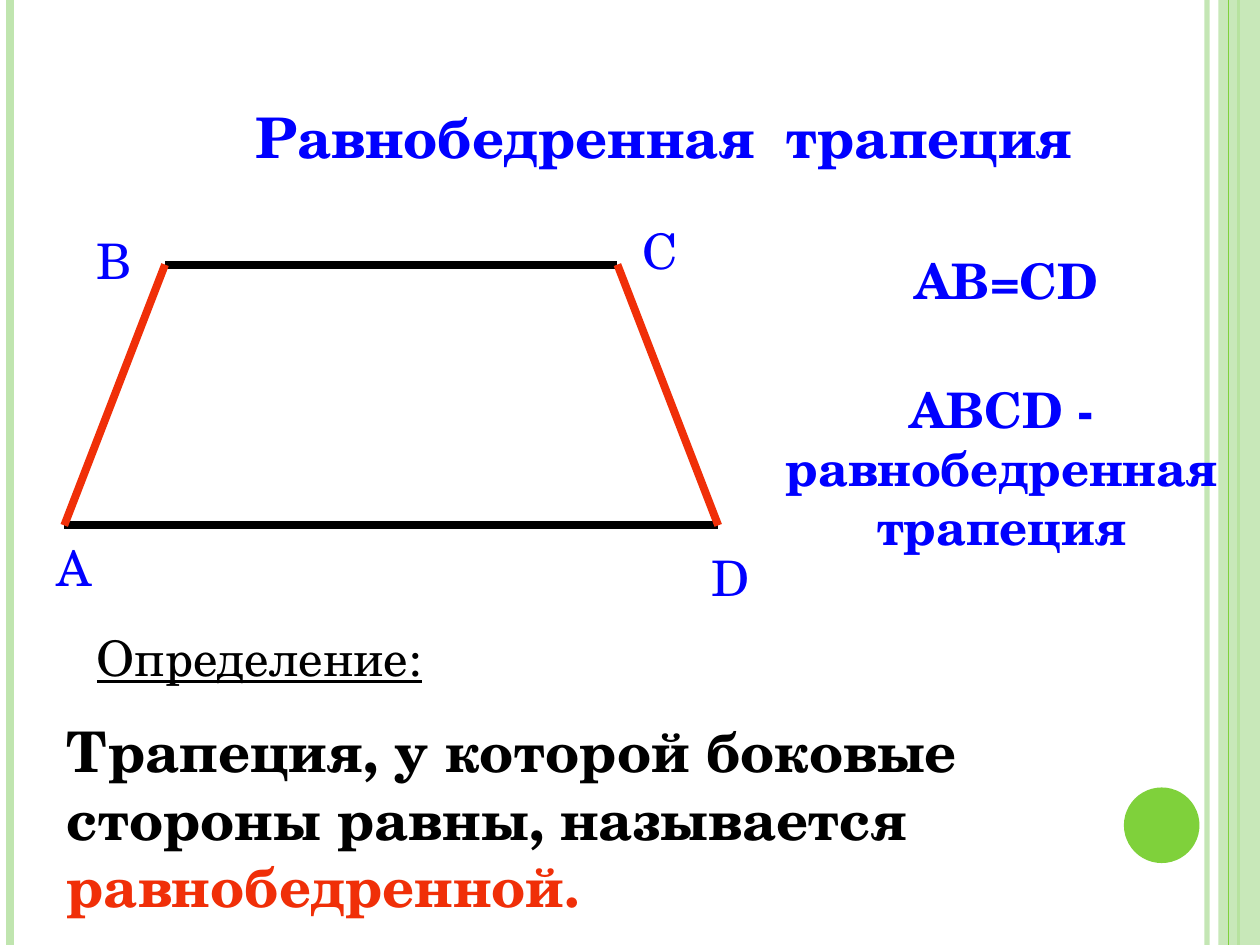
from dataclasses import dataclass

from lxml import etree
from pptx import Presentation
from pptx.dml.color import RGBColor
from pptx.enum.shapes import MSO_CONNECTOR, MSO_SHAPE
from pptx.enum.text import MSO_ANCHOR, MSO_AUTO_SIZE, PP_ALIGN
from pptx.oxml.ns import qn
from pptx.util import Inches, Pt

STRAIGHT = MSO_CONNECTOR.STRAIGHT
RECTANGLE, OVAL = MSO_SHAPE.RECTANGLE, MSO_SHAPE.OVAL
TOP = MSO_ANCHOR.TOP
NO_FIT = MSO_AUTO_SIZE.NONE
LEFT, CENTER = PP_ALIGN.LEFT, PP_ALIGN.CENTER

FONT = "TeX Gyre Schola"
BLUE, RED, BLACK = "0000FF", "F02F08", "000000"
GREEN, PALE_GREEN = "7FD13B", "C0E5AF"

# The slide is a grid of 100 columns by 75 rows
WIDTH, HEIGHT = Inches(10), Inches(7.5)
COLUMNS, ROWS = 100, 75


@dataclass
class Area:
    column: float
    row: float
    columns: float
    rows: float


@dataclass
class Line:
    start: tuple[float, float]
    end: tuple[float, float]
    color: str
    weight: float
    opacity: int = 100


@dataclass
class Span:
    text: str
    color: str = BLUE
    size: int = 28
    bold: bool = False
    underline: bool = False


def across(columns: float) -> int:
    return round(WIDTH * columns / COLUMNS)


def down(rows: float) -> int:
    return round(HEIGHT * rows / ROWS)


def place(area: Area) -> tuple[int, int, int, int]:
    return across(area.column), down(area.row), across(area.columns), down(area.rows)


def paint(color_format, color: str, opacity: int = 100) -> None:
    color_format.rgb = RGBColor.from_string(color)


def set_fill(fill, color: str, opacity: int = 100) -> None:
    fill.solid()
    paint(fill.fore_color, color)
    if opacity < 100:
        # Opacity has no public method
        value = fill._xPr.find(".//" + qn("a:srgbClr"))
        etree.SubElement(value, qn("a:alpha")).set("val", str(opacity * 1000))


def draw_line(shapes, line: Line) -> None:
    connector = shapes.add_connector(
        STRAIGHT, across(line.start[0]), down(line.start[1]),
        across(line.end[0]), down(line.end[1]))
    connector.line.width = Pt(line.weight)
    set_fill(connector.line.fill, line.color, line.opacity)
    etree.SubElement(connector._element.spPr, qn("a:effectLst"))


def draw_shape(shapes, kind, area: Area, color: str, opacity: int = 100) -> None:
    shape = shapes.add_shape(kind, *place(area))
    shape.shadow.inherit = False
    shape.line.fill.background()
    set_fill(shape.fill, color, opacity)


def write(box, spans: list[Span], align=LEFT, wrap: bool = True) -> None:
    frame = box.text_frame
    frame.word_wrap = wrap
    frame.auto_size = NO_FIT
    frame.vertical_anchor = TOP
    para = frame.paragraphs[0]
    para.alignment = align
    for span in spans:
        run = para.add_run()
        run.text = span.text
        font = run.font
        font.name, font.size = FONT, Pt(span.size)
        font.bold, font.underline = span.bold, span.underline
        paint(font.color, span.color)


def add_text(shapes, area: Area, spans: list[Span], **layout) -> None:
    write(shapes.add_textbox(*place(area)), spans, **layout)


def edge(column: float, color: str, weight: float, opacity: int = 100) -> Line:
    return Line((column, 0), (column, ROWS), color, weight, opacity)


def draw_frame(shapes) -> None:
    draw_line(shapes, edge(95.8, PALE_GREEN, 3, 93))
    draw_line(shapes, edge(0.8, PALE_GREEN, 4.5))
    draw_line(shapes, edge(98.3, GREEN, 1.5))
    draw_shape(shapes, RECTANGLE, Area(96.7, 0, 3.3, ROWS), PALE_GREEN, 87)
    draw_line(shapes, edge(97.5, GREEN, 0.75))
    draw_shape(shapes, OVAL, Area(89.2, 62.5, 6, 6), GREEN)


def draw_trapezoid(shapes) -> None:
    a, b, c, d = (5.1, 41.7), (13.1, 21), (49, 21), (57, 41.7)
    for start, end, color in ((b, c, BLACK), (a, d, BLACK), (b, a, RED), (c, d, RED)):
        draw_line(shapes, Line(start, end, color, 4.5))
    labels = {"A": (3.5, 42.2), "B": (6.7, 17.8), "C": (50, 17), "D": (55.5, 43)}
    for letter, (column, row) in labels.items():
        add_text(shapes, Area(column, row, 4.8, 5.7), [Span(letter)], wrap=False)


def main() -> None:
    deck = Presentation()
    deck.slide_width, deck.slide_height = WIDTH, HEIGHT
    page = deck.slides.add_slide(deck.slide_layouts[5])
    shapes = page.shapes

    # Side stripes and the round marker
    draw_frame(shapes)

    # Title
    title = shapes.title
    title.left, title.top, title.width, title.height = place(Area(16.9, 7.6, 71.7, 6.4))
    write(title, [Span("Равнобедренная  трапеция", size=32, bold=True)], align=CENTER)

    # Definition
    add_text(shapes, Area(6.7, 49.3, 45, 5.7),
             [Span("Определение:", BLACK, underline=True)])
    add_text(shapes, Area(4.3, 56.4, 88.2, 16.8), [
        Span("Трапеция, у которой боковые стороны равны, называется ", BLACK, 32, True),
        Span("равнобедренной.", RED, 32, True)])

    # Figure with its vertex labels
    draw_trapezoid(shapes.add_group_shape().shapes)

    # Given and conclusion
    add_text(shapes, Area(68.9, 19.4, 22, 5.7), [Span("AB=CD", bold=True)], align=CENTER)
    add_text(shapes, Area(59, 29.6, 41, 15),
             [Span("ABCD - равнобедренная трапеция", bold=True)], align=CENTER)

    deck.save("out.pptx")


if __name__ == "__main__":
    main()
